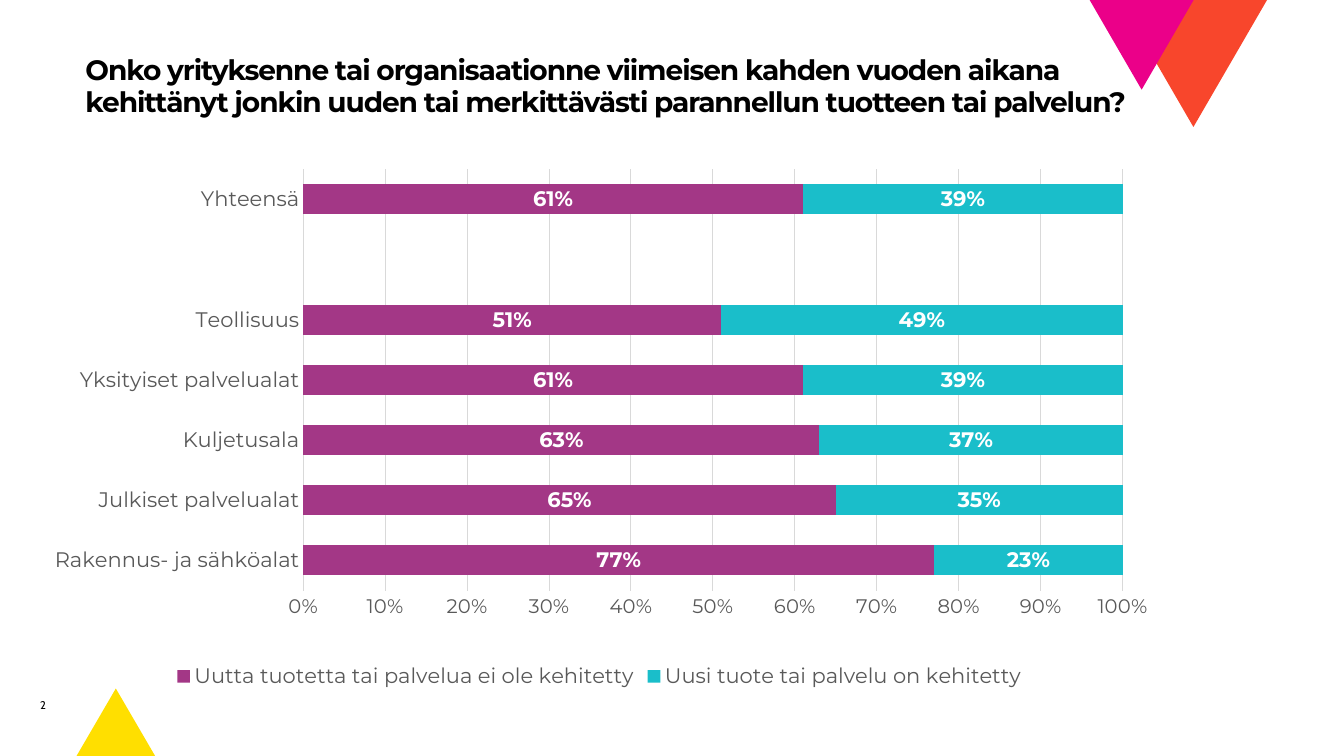
import dataclasses
import typing

import lxml.etree
import pptx
import pptx.chart.data
import pptx.dml.color
import pptx.enum.chart
import pptx.enum.shapes
import pptx.enum.text
import pptx.oxml
import pptx.util

Cm = pptx.util.Cm
Pt = pptx.util.Pt


@dataclasses.dataclass(frozen=True)
class Theme:
    black: str = "000000"
    white: str = "FFFFFF"
    grey: str = "595959"
    rule: str = "D9D9D9"
    plum: str = "A33786"
    teal: str = "1ABECA"
    yellow: str = "FFDF00"
    orange: str = "F8462C"
    pink: str = "EB0089"
    main: str = "Montserrat"
    minor: str = "Cabin"
    title: int = 20
    label: int = 15
    scale: int = 14
    page: int = 8


@dataclasses.dataclass(frozen=True)
class Box:
    left: float
    top: float
    width: float
    height: float

    def place(self) -> tuple:
        return Cm(self.left), Cm(self.top), Cm(self.width), Cm(self.height)


@dataclasses.dataclass(frozen=True)
class Peak:
    box: Box
    fill: str
    turn: int


@dataclasses.dataclass(frozen=True)
class Answer:
    name: str
    color: str
    shares: tuple


THEME = Theme()

PEAKS = (
    Peak(Box(1.93, 17.35, 1.98, 1.7), THEME.yellow, 0),
    Peak(Box(28.22, 0, 3.71, 3.2), THEME.orange, 180),
    Peak(Box(27.46, 0, 2.62, 2.26), THEME.pink, 180),
)

TITLE = (
    "Onko yrityksenne tai organisaationne viimeisen kahden vuoden aikana",
    "kehittänyt jonkin uuden tai merkittävästi parannellun tuotteen tai palvelun?",
)

SECTORS = (
    "Rakennus- ja sähköalat", "Julkiset palvelualat", "Kuljetusala",
    "Yksityiset palvelualat", "Teollisuus", "", "Yhteensä",
)

ANSWERS = (
    Answer("Uutta tuotetta tai palvelua ei ole kehitetty", THEME.plum,
           (0.77, 0.65, 0.63, 0.61, 0.51, None, 0.61)),
    Answer("Uusi tuote tai palvelu on kehitetty", THEME.teal,
           (0.23, 0.35, 0.37, 0.39, 0.49, None, 0.39)),
)

PLOT = {"x": 0.24, "y": 0.03, "w": 0.72, "h": 0.78}


def tint(code: str) -> pptx.dml.color.RGBColor:
    return pptx.dml.color.RGBColor.from_string(code)


def style(font: typing.Any, face: str, size: int, color: str, bold: bool = False) -> None:
    font.name = face
    font.size = Pt(size)
    font.bold = bold
    font.color.rgb = tint(color)


def rule(line: typing.Any) -> None:
    line.color.rgb = tint(THEME.rule)
    line.width = Pt(0.75)


def draw_peak(slide: typing.Any, peak: Peak) -> None:
    kind = pptx.enum.shapes.MSO_SHAPE.ISOSCELES_TRIANGLE
    shape = slide.shapes.add_shape(kind, *peak.box.place())
    shape.rotation = peak.turn
    shape.shadow.inherit = False
    shape.fill.solid()
    shape.fill.fore_color.rgb = tint(peak.fill)
    shape.line.fill.background()


def draw_title(slide: typing.Any, box: Box) -> None:
    title = slide.shapes.title
    title.left, title.top, title.width, title.height = box.place()
    frame = title.text_frame
    frame.word_wrap = True
    frame.auto_size = pptx.enum.text.MSO_AUTO_SIZE.NONE
    frame.vertical_anchor = pptx.enum.text.MSO_ANCHOR.TOP
    for index, text in enumerate(TITLE):
        para = frame.add_paragraph() if index else frame.paragraphs[0]
        para.alignment = pptx.enum.text.PP_ALIGN.LEFT
        para.line_spacing = 0.95
        para.space_before = Pt(0)
        run = para.add_run()
        run.text = text
        style(run.font, THEME.main, THEME.title, THEME.black, True)
        run.font._element.set("spc", "-80")


def draw_page(slide: typing.Any, box: Box) -> None:
    frame = slide.shapes.add_textbox(*box.place()).text_frame
    frame.word_wrap = True
    run = frame.paragraphs[0].add_run()
    run.text = "2"
    style(run.font, THEME.minor, THEME.page, THEME.black)


def fix_plot(chart: typing.Any) -> None:
    area = chart._chartSpace.chart.plotArea
    space = "http://schemas.openxmlformats.org/drawingml/2006/chart"
    for old in area.findall(f"{{{space}}}layout"):
        area.remove(old)
    modes = '<c:layoutTarget val="inner"/><c:xMode val="edge"/><c:yMode val="edge"/>'
    sizes = "".join(f'<c:{key} val="{value}"/>' for key, value in PLOT.items())
    area.insert(0, pptx.oxml.parse_xml(
        f'<c:layout xmlns:c="{space}"><c:manualLayout>{modes}{sizes}'
        "</c:manualLayout></c:layout>"))


def draw_chart(slide: typing.Any, box: Box) -> None:
    enum = pptx.enum.chart
    data = pptx.chart.data.CategoryChartData(number_format="0%")
    data.categories = SECTORS
    for answer in ANSWERS:
        data.add_series(answer.name, answer.shares)
    kind = enum.XL_CHART_TYPE.BAR_STACKED
    chart = slide.shapes.add_chart(kind, *box.place(), data).chart
    style(chart.font, THEME.minor, THEME.label, THEME.black)
    chart.has_title = False
    fix_plot(chart)

    plot = chart.plots[0]
    plot.gap_width = 100
    plot.overlap = 100
    plot.vary_by_categories = False
    for series, answer in zip(plot.series, ANSWERS):
        series.format.fill.solid()
        series.format.fill.fore_color.rgb = tint(answer.color)
        labels = series.data_labels
        labels.show_value = True
        labels.number_format = "0%"
        labels.number_format_is_linked = False
        labels.position = enum.XL_LABEL_POSITION.CENTER
        style(labels.font, THEME.main, THEME.label, THEME.white, True)

    names, scale = chart.category_axis, chart.value_axis
    for axis, size in ((names, THEME.label), (scale, THEME.scale)):
        axis.major_tick_mark = enum.XL_TICK_MARK.NONE
        axis.minor_tick_mark = enum.XL_TICK_MARK.NONE
        style(axis.tick_labels.font, THEME.main, size, THEME.grey)
    rule(names.format.line)
    scale.minimum_scale = 0
    scale.maximum_scale = 1
    scale.major_unit = 0.1
    scale.tick_labels.number_format = "0%"
    scale.tick_labels.number_format_is_linked = False
    scale.format.line.fill.background()
    rule(scale.major_gridlines.format.line)

    chart.has_legend = True
    chart.legend.position = enum.XL_LEGEND_POSITION.BOTTOM
    chart.legend.include_in_layout = False
    style(chart.legend.font, THEME.main, THEME.label, THEME.grey)


def main() -> None:
    deck = pptx.Presentation()
    deck.slide_width = Cm(33.87)
    deck.slide_height = Cm(19.05)
    slide = deck.slides.add_slide(deck.slide_layouts.get_by_name("Title Only"))
    for peak in PEAKS:
        draw_peak(slide, peak)
    draw_page(slide, Box(0.76, 17.48, 1.12, 0.94))
    draw_title(slide, Box(1.9, 1.27, 30, 2.49))
    draw_chart(slide, Box(0.76, 3.86, 28.68, 13.61))
    deck.save("out.pptx")


if __name__ == "__main__":
    main()
